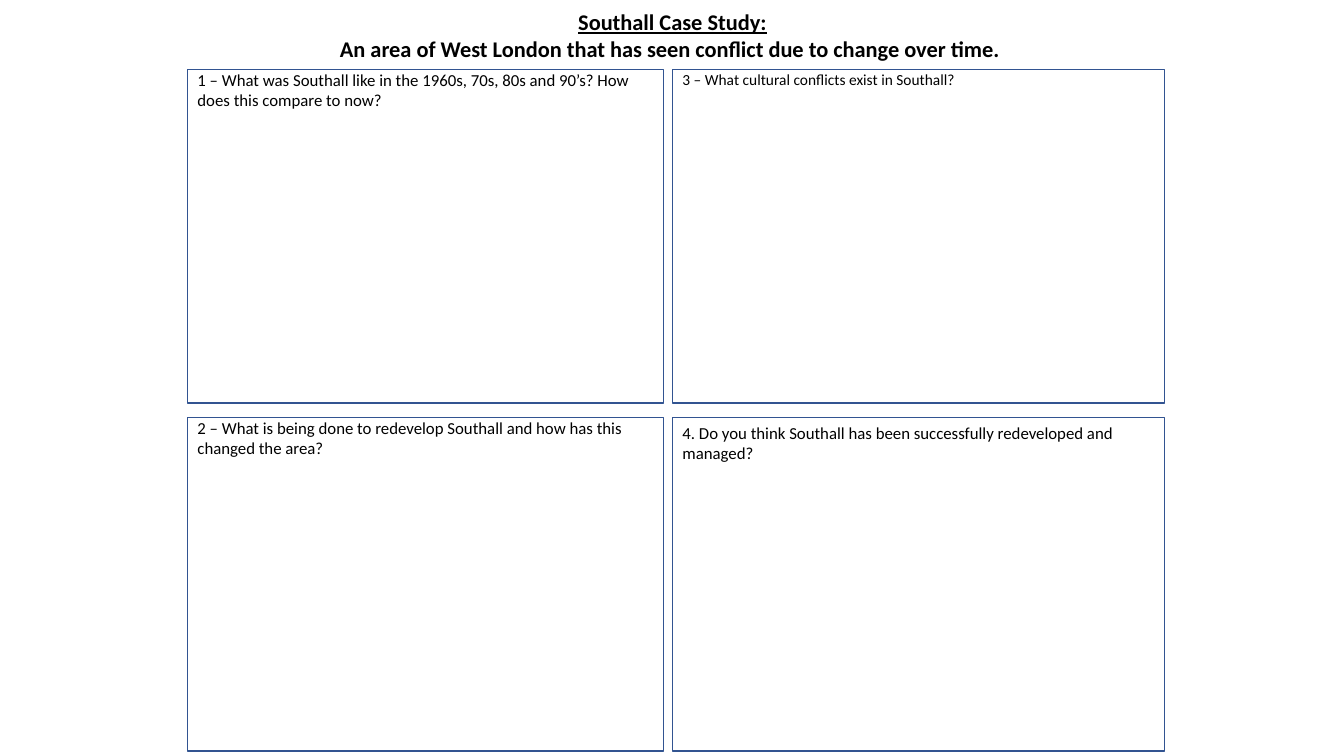
from dataclasses import dataclass

import pptx
import pptx.dml.color
import pptx.enum.shapes
import pptx.enum.text
import pptx.util
from pptx.util import Inches


@dataclass(frozen=True)
class Theme:
    font: str = "Calibri"
    ink: str = "000000"
    paper: str = "FFFFFF"
    border: str = "325491"
    title_size: int = 16
    question_size: int = 12
    small_size: int = 11
    border_width: int = 1


@dataclass(frozen=True)
class Column:
    left: float
    width: float


@dataclass(frozen=True)
class Question:
    text: str
    column: Column
    top: float
    size: int
    top_inset: float = 0


THEME = Theme()
LEFT = Column(1.86, 4.72)
RIGHT = Column(6.67, 4.88)
BOX_HEIGHT = 3.31
TOP_ROW = 0.69
BOTTOM_ROW = TOP_ROW + BOX_HEIGHT + 0.14

QUESTIONS = [
    Question("1 – What was Southall like in the 1960s, 70s, 80s and 90’s? "
             "How does this compare to now?", LEFT, TOP_ROW, THEME.question_size),
    Question("2 – What is being done to redevelop Southall and how has this "
             "changed the area?", LEFT, BOTTOM_ROW, THEME.question_size),
    Question("3 – What cultural conflicts exist in Southall?",
             RIGHT, TOP_ROW, THEME.small_size, 0.01),
    Question("4. Do you think Southall has been successfully redeveloped and "
             "managed?", RIGHT, BOTTOM_ROW, THEME.question_size, 0.05),
]


def colour(code: str) -> pptx.dml.color.RGBColor:
    return pptx.dml.color.RGBColor.from_string(code)


def add_span(para, text: str, size: int, bold: bool = False,
             underline: bool = False) -> None:
    span = para.add_run()
    span.text = text
    span.font.name = THEME.font
    span.font.size = pptx.util.Pt(size)
    span.font.bold = bold
    span.font.underline = underline
    span.font.color.rgb = colour(THEME.ink)


def write_title(page) -> None:
    box = page.shapes.title
    box.left, box.top = Inches(1.57), Inches(0.03)
    box.width, box.height = Inches(10.2), Inches(0.64)
    frame = box.text_frame
    frame.word_wrap = True
    frame.auto_size = pptx.enum.text.MSO_AUTO_SIZE.NONE
    frame.vertical_anchor = pptx.enum.text.MSO_ANCHOR.TOP
    heading, subtitle = frame.paragraphs[0], frame.add_paragraph()
    for para in (heading, subtitle):
        para.alignment = pptx.enum.text.PP_ALIGN.CENTER
    add_span(heading, "Southall Case Study:", THEME.title_size, True, True)
    add_span(subtitle, "An area of West London that has seen conflict due to "
             "change over time. ", THEME.title_size, True)


def draw_question(page, question: Question) -> None:
    box = page.shapes.add_shape(
        pptx.enum.shapes.MSO_SHAPE.RECTANGLE,
        Inches(question.column.left), Inches(question.top),
        Inches(question.column.width), Inches(BOX_HEIGHT))
    box.shadow.inherit = False
    box.fill.solid()
    box.fill.fore_color.rgb = colour(THEME.paper)
    box.line.color.rgb = colour(THEME.border)
    box.line.width = pptx.util.Pt(THEME.border_width)
    frame = box.text_frame
    frame.word_wrap = True
    frame.vertical_anchor = pptx.enum.text.MSO_ANCHOR.TOP
    frame.margin_top = Inches(question.top_inset)
    para = frame.paragraphs[0]
    para.alignment = pptx.enum.text.PP_ALIGN.LEFT
    add_span(para, question.text, question.size)


def main() -> None:
    deck = pptx.Presentation()
    deck.slide_width, deck.slide_height = Inches(13.33), Inches(7.5)
    # Title-only layout
    page = deck.slides.add_slide(deck.slide_layouts[5])
    write_title(page)
    # Question boxes, two by two
    for question in QUESTIONS:
        draw_question(page, question)
    deck.save("out.pptx")


if __name__ == "__main__":
    main()
